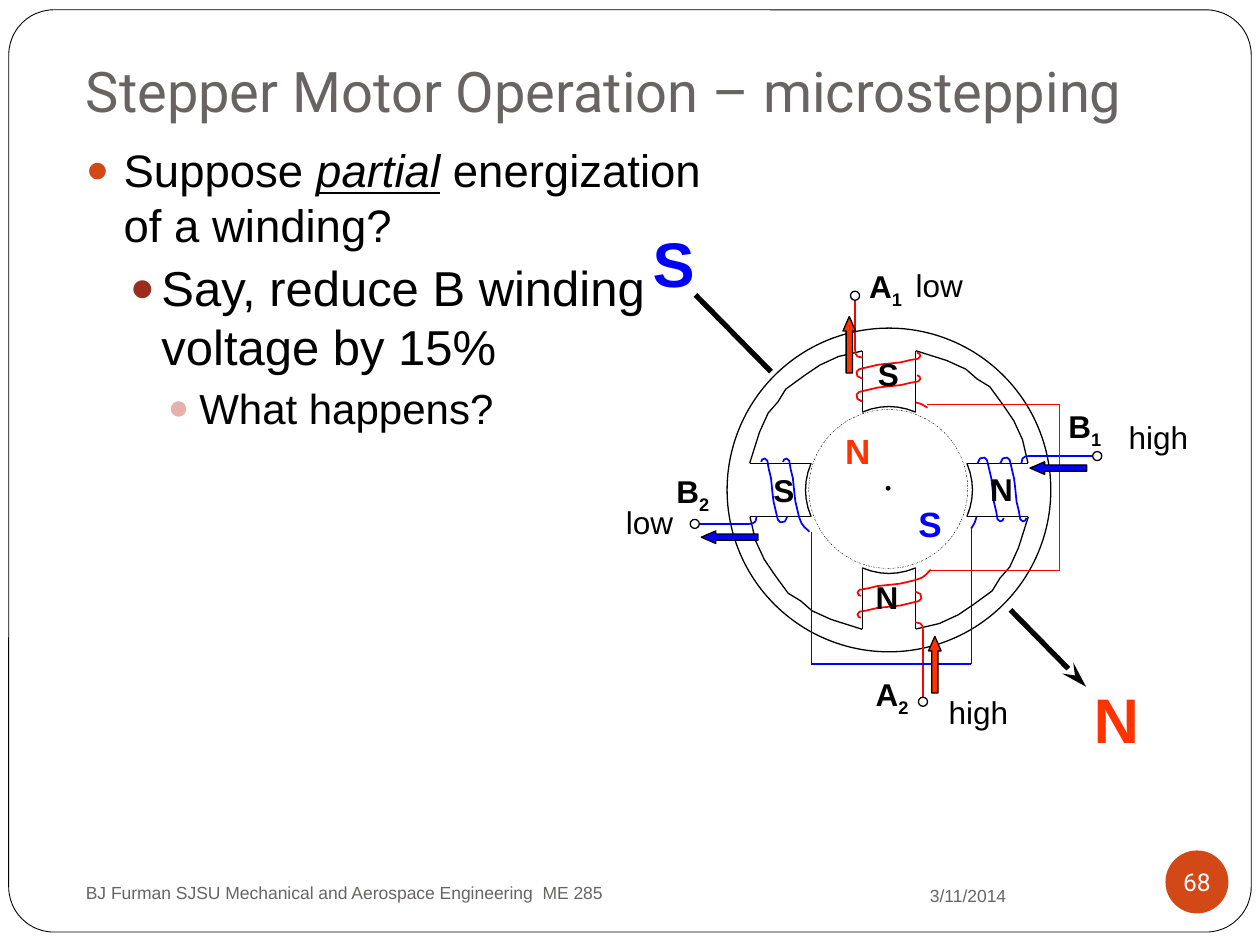
from dataclasses import dataclass
from lxml.etree import SubElement
from pptx import Presentation
from pptx.dml.color import RGBColor
from pptx.enum.dml import MSO_LINE
from pptx.enum.shapes import MSO_CONNECTOR, MSO_SHAPE
from pptx.enum.text import MSO_ANCHOR, PP_ALIGN
from pptx.oxml.ns import qn
from pptx.util import Pt


@dataclass(frozen=True)
class Theme:
    """Colours, fonts and type sizes."""
    ink: str = "000000"
    white: str = "FFFFFF"
    gray: str = "696464"
    red: str = "FF0000"
    blue: str = "0000FF"
    flame: str = "FF3300"
    rust: str = "D34817"
    brick: str = "9B2D1F"
    rose: str = "E6B1AC"
    head: str = "Roboto"
    body: str = "Arial"
    title: int = 32
    list: tuple = (26, 28, 24)
    foot: int = 10
    page: int = 14
    label: int = 18
    pole: int = 20
    field: int = 36
    thin: float = 0.75


class Deck:
    """Holds the theme and the current slide."""

    def __init__(self, theme, slide):
        """Keep the theme and the slide."""
        self.theme = theme
        self.shapes = slide.shapes

    def ink(self, line, color, width):
        """Colour a line."""
        line.color.rgb = RGBColor.from_string(color)
        line.width = Pt(width)

    def shape(self, kind, box, fill=None, line=None, width=0.75):
        """Add a preset shape."""
        item = self.shapes.add_shape(kind, *map(Pt, box))
        item.shadow.inherit = False
        if fill:
            item.fill.solid()
            item.fill.fore_color.rgb = RGBColor.from_string(fill)
        else:
            item.fill.background()
        if line:
            self.ink(item.line, line, width)
        else:
            item.line.fill.background()
        return item

    def disc(self, mid, radius, fill=None, line=None, width=0.75):
        """Add a circle by its centre and radius."""
        x, y = mid
        box = (x - radius, y - radius, 2 * radius, 2 * radius)
        return self.shape(MSO_SHAPE.OVAL, box, fill, line, width)

    def arrow(self, mid, angle, fill):
        """Add a block arrow about its centre."""
        x, y = mid
        item = self.shape(MSO_SHAPE.DOWN_ARROW, (x - 3.6, y - 16.2, 7.2, 32.4), fill, self.theme.ink)
        item.adjustments[0], item.adjustments[1] = 0.5, 1.156
        item.rotation = angle

    def line(self, start, end, color, width=0.75, head=False):
        """Add a straight line."""
        item = self.shapes.add_connector(MSO_CONNECTOR.STRAIGHT, *map(Pt, (*start, *end)))
        self.ink(item.line, color, width)
        props = item._element.spPr
        if head:
            SubElement(props.find(qn("a:ln")), qn("a:tailEnd"), type="stealth", len="lg")
        SubElement(props, qn("a:effectLst"))

    def curve(self, points, color, width=1):
        """Add an open outline through the points."""
        spots = [(Pt(x), Pt(y)) for x, y in points]
        pen = self.shapes.build_freeform(*spots[0], scale=1.0)
        pen.add_line_segments(spots[1:], close=False)
        item = pen.convert_to_shape()
        item.shadow.inherit = False
        item.fill.background()
        self.ink(item.line, color, width)

    def style(self, font, size, color, bold=False, face=None):
        """Set a font."""
        font.name = face or self.theme.body
        font.size = Pt(size)
        font.bold = bold
        font.color.rgb = RGBColor.from_string(color)

    def text(self, box, words, size, color, bold=False, face=None, wrap=True,
             anchor=MSO_ANCHOR.TOP, align=PP_ALIGN.LEFT, sub=None):
        """Add a one-line text box, with an optional subscript."""
        frame = self.shapes.add_textbox(*map(Pt, box)).text_frame
        frame.word_wrap = wrap
        frame.vertical_anchor = anchor
        para = frame.paragraphs[0]
        para.text = words
        para.alignment = align
        if sub:
            para.add_run().text = sub
            para.runs[1].font._element.set("baseline", "-25000")
        for run in para.runs:
            self.style(run.font, size, color, bold, face)
        return frame

    def list(self, box, items):
        """Add a bullet list of (indent, hang, colour, parts)."""
        frame = self.shapes.add_textbox(*map(Pt, box)).text_frame
        frame.word_wrap = True
        for rank, (left, hang, color, parts) in enumerate(items):
            para = frame.add_paragraph() if rank else frame.paragraphs[0]
            para.level = rank
            props = para._p.get_or_add_pPr()
            props.set("marL", str(Pt(left)))
            props.set("indent", str(-Pt(hang)))
            SubElement(SubElement(props, qn("a:buClr")), qn("a:srgbClr"), val=color)
            SubElement(props, qn("a:buSzPct"), val="85000")
            SubElement(props, qn("a:buFont"), typeface=self.theme.body)
            SubElement(props, qn("a:buChar"), char="●")
            if rank:
                para.space_before = Pt(3.7)
            para.text = parts[0]
            for part in parts[1:]:
                if part == "\v":
                    para.add_line_break()
                else:
                    para.add_run().text = part
            for font in (para.font, *(run.font for run in para.runs)):
                self.style(font, self.theme.list[rank], self.theme.ink)
        return frame


HUB = (508, 280)
REACH = (111, 119, 121, 111)
LOOP = [(0, 0), (-3, -1.5), (-3.5, -4), (-2, -5.5), (0, -6), (8.6, -8), (13.7, -8.6),
        (21.6, -9.4), (27.4, -10.8), (31.7, -11.5), (33, -13), (32.4, -14.5), (31, -15)]
ENTRY = [(-8.8, 0), (-6, -3), (-4, -4.5), (-2, -5.3)] + LOOP[4:]
RIM = [(15.3, -79.6), (33, -74), (44, -69), (50.4, -63.4), (57.6, -59),
       (65.5, -48.2), (71.3, -39.6), (76.3, -28.8), (79.4, -15.5)]
FACE = [(x, -44.5 - 3.2 * (1 - (x / 15.3) ** 2)) for x in (-15.3, -10, -5, 0, 5, 10, 15.3)]
TAIL = [(15.5, -50), (18.7, -49), (22, -47)]


def turn(points, count):
    """Turn points about the hub by quarter turns."""
    for _ in range(count):
        points = [(-y, x) for x, y in points]
    return [(HUB[0] + x, HUB[1] + y) for x, y in points]


def motor(deck):
    """Draw the stator, the windings and the rotor."""
    t = deck.theme
    deck.disc(HUB, 92.5, t.white, t.ink)
    for side in range(4):
        for x in (-15.3, 15.3):
            deck.line(*turn([(x, -79.4), (x, -44.5)], side), t.ink)
        deck.curve(turn(FACE, side), t.ink, t.thin)
        deck.curve(turn(RIM, side), t.ink, t.thin)
    for side, reach in enumerate(REACH):
        color = (t.red, t.blue)[side % 2]
        first = side < 2
        turns = ((63.5, LOOP), (50.5, LOOP)) if first else ((58, LOOP), (45.5, ENTRY))
        for depth, loop in turns:
            deck.curve(turn([(x - 15, y - depth) for x, y in loop], side), color)
        lead = [(-19.4, -reach), (-19.4, -80), (-19.2, -78), (-18, -76.3), (-15, -75.6)]
        deck.curve(turn(lead, side), color)
        if first:
            deck.curve(turn(TAIL, side), color)
    links = ((t.red, [(530, 231.2), (605.5, 231.2), (605.5, 326.2), (532, 326.2)]),
             (t.blue, [(555, 302), (555, 379.5), (463.7, 379.5), (463.7, 304)]))
    for color, route in links:
        for start, end in zip(route, route[1:]):
            deck.line(start, end, color)
    for side, reach in enumerate(REACH):
        deck.disc(turn([(-19.4, -reach)], side)[0], 2.6, t.white, t.ink)
    deck.disc((507.5, 279), 1, t.ink, t.ink)
    rotor = deck.disc((507.6, 279.4), 45.4, None, t.ink, 0.25)
    rotor.line.dash_style = MSO_LINE.DASH_DOT


def labels(deck):
    """Add the labels, current arrows and field line."""
    t = deck.theme
    for x, y, word, sub in ((489.6, 149, "A", "1"), (603.4, 229, "B", "1"), (493.2, 382.3, "A", "2"),
                            (379.4, 266.4, "B", "2"), (493.2, 326.9, "N", None), (494.6, 199.4, "S", None),
                            (558.7, 265, "N", None), (434.9, 265.7, "S", None)):
        deck.text((x, y, 41.8, 29.5), word, t.label, t.ink, True, sub=sub)
    for x, y, wide, word in ((535, 392.4, 52, "high"), (516.2, 148.3, 44, "low"),
                             (350.6, 283.7, 44, "low"), (637.9, 235.4, 52, "high")):
        deck.text((x, y, wide, 28.8), word, t.label, t.ink, wrap=False)
    for mid, angle, fill in (((485.3, 197), 180, t.flame), ((534.2, 379.8), 180, t.flame),
                             ((604.8, 267.5), 90, t.blue), ((416.9, 307), 90, t.blue)):
        deck.arrow(mid, angle, fill)
    deck.line((577.4, 348.5), (620.6, 392.4), t.ink, 3, True)
    deck.line((397.4, 168.5), (440.6, 212.4), t.ink, 3)
    for x, y, word, size, color in ((617.8, 385.2, "N", t.field, t.flame), (365.8, 124.6, "S", t.field, t.blue),
                                    (475.9, 241.9, "N", t.pole, t.flame), (517.7, 283.7, "S", t.pole, t.blue)):
        deck.text((x, y, size * 0.72 + 15, size * 1.4), word, size, color, True, wrap=False)


def main():
    """Build the slide and save it."""
    show = Presentation()
    show.slide_width, show.slide_height = Pt(720), Pt(540)
    slide = show.slides.add_slide(show.slide_layouts[6])
    t = Theme()
    deck = Deck(t, slide)
    mid = MSO_ANCHOR.MIDDLE
    frame = deck.shape(MSO_SHAPE.ROUNDED_RECTANGLE, (5, 5.6, 710, 527), t.white, t.ink, 0.5)
    frame.adjustments[0] = 0.049
    title = deck.text((42, 21.6, 642, 56.2), "Stepper Motor Operation – microstepping",
                      t.title, t.gray, face=t.head, anchor=MSO_ANCHOR.BOTTOM)
    title.margin_bottom = Pt(7.2)
    deck.text((486, 501, 96, 21), "3/11/2014", t.foot, t.gray, anchor=mid, align=PP_ALIGN.RIGHT)
    deck.text((42, 498.2, 354, 24), "BJ Furman SJSU Mechanical and Aerospace Engineering  ME 285",
              t.foot, t.gray, anchor=mid)
    deck.disc((684, 504), 18, t.rust)
    deck.text((666, 486, 36, 36), "68", t.page, t.white, face=t.head, wrap=False,
              anchor=mid, align=PP_ALIGN.CENTER)
    points = deck.list((42, 77.8, 642, 396), (
        (21.6, 21.6, t.rust, ("Suppose ", "partial", " energization", "\v", "of a winding?")),
        (43.2, 18, t.brick, ("Say, reduce B winding", "\v", "voltage by 15%")),
        (64.8, 18, t.rose, ("What happens?",))))
    stress = points.paragraphs[0].runs[1].font
    stress.italic = stress.underline = True
    motor(deck)
    labels(deck)
    show.save("out.pptx")


if __name__ == "__main__":
    main()
